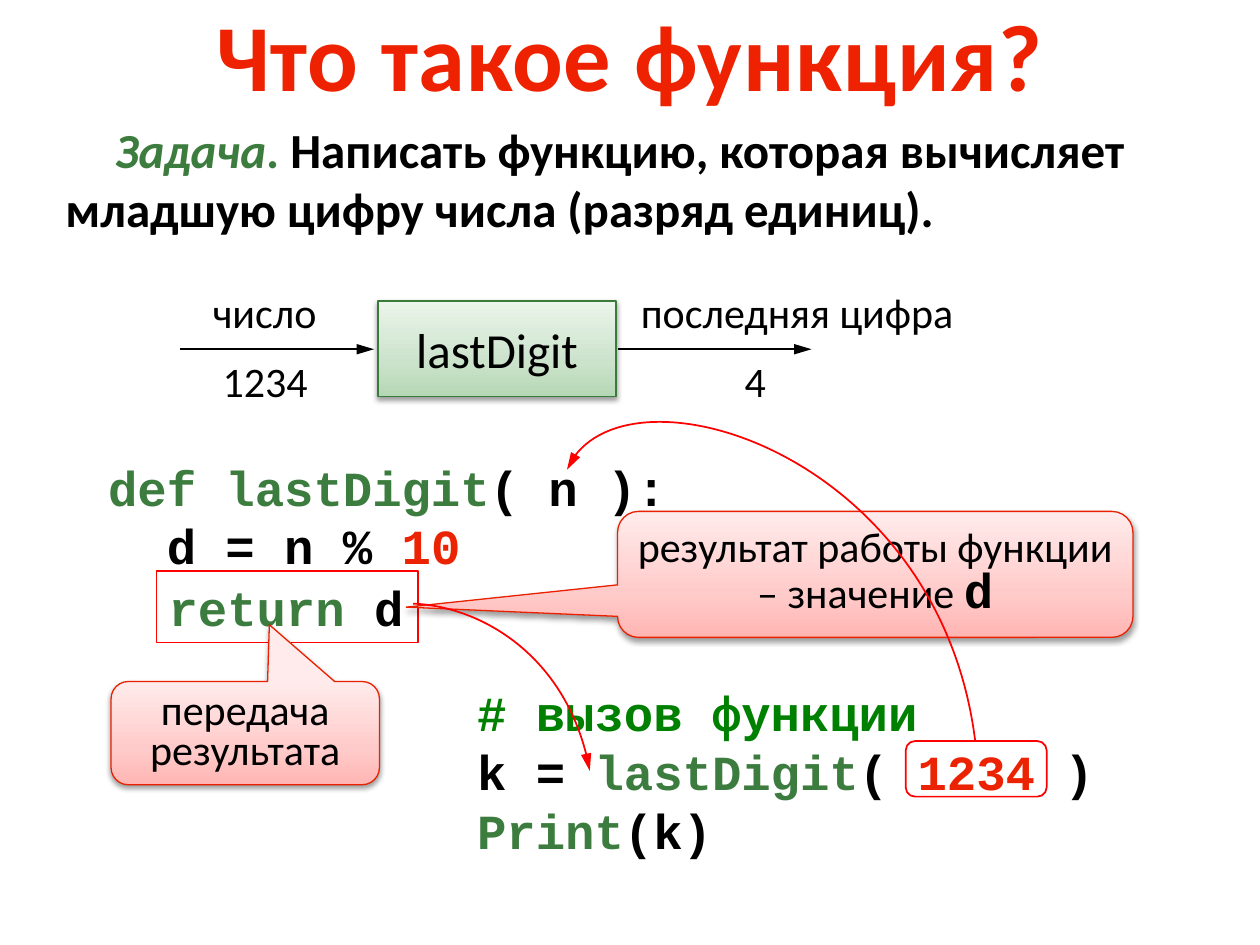
from copy import deepcopy

from lxml import etree
from pptx import Presentation
from pptx.dml.color import RGBColor
from pptx.enum import shapes, text
from pptx.oxml import parse_xml
from pptx.oxml.ns import nsdecls, qn
from pptx.util import Cm, Pt

BLACK = RGBColor(0x00, 0x00, 0x00)
WHITE = RGBColor(0xFF, 0xFF, 0xFF)
TITLE_RED = RGBColor(0xEE, 0x22, 0x00)
NUMBER_RED = RGBColor(0xEC, 0x23, 0x02)
CALLOUT_RED = RGBColor(0xE9, 0x21, 0x00)
LINE_RED = RGBColor(0xFF, 0x00, 0x00)
GREEN = RGBColor(0x3C, 0x7C, 0x3E)
COMMENT_GREEN = RGBColor(0x00, 0x80, 0x00)
BOX_GREEN = RGBColor(0x39, 0x7B, 0x3B)
GREEN_STOPS = [RGBColor(0xB4, 0xD7, 0xB4), RGBColor(0xCB, 0xE2, 0xCB), RGBColor(0xEB, 0xF5, 0xEB)]
PINK_STOPS = [RGBColor(0xFF, 0xB5, 0xB3), RGBColor(0xFF, 0xCB, 0xCA), RGBColor(0xFF, 0xEB, 0xEB)]
SANS, MONO = "Calibri", "Courier New"
SHAPE, ALIGN, ANCHOR = shapes.MSO_SHAPE, text.PP_ALIGN, text.MSO_ANCHOR


def write(sp, lines, size=24, font=SANS, bold=False, align=ALIGN.LEFT,
          anchor=ANCHOR.TOP, wrap=True, indent=0, spacing=None):
    """Each line is a list of (text, colour) or (text, colour, overrides)."""
    tf = sp.text_frame
    tf.word_wrap, tf.vertical_anchor = wrap, anchor
    for i, line in enumerate(lines):
        p = tf.add_paragraph() if i else tf.paragraphs[0]
        p.alignment, p.line_spacing = align, spacing
        if indent:
            p._p.get_or_add_pPr().set("indent", str(Cm(indent)))
        for words, colour, *extra in line:
            look = {"size": size, "name": font, "bold": bold, **(extra[0] if extra else {})}
            r = p.add_run()
            r.text = words
            r.font.color.rgb = colour
            look["size"] = Pt(look["size"])
            for key, value in look.items():
                setattr(r.font, key, value)
    return sp


def add_text(s, box, lines, **fmt):
    return write(s.shapes.add_textbox(*map(Cm, box)), lines, **fmt)


def add_box(s, kind, box, line, width=0.75, fill=None):
    sp = s.shapes.add_shape(kind, *map(Cm, box))
    sp.shadow.inherit = False
    sp.line.color.rgb, sp.line.width = line, Pt(width)
    if fill is None:
        sp.fill.background()
    else:
        sp.fill.solid()
        sp.fill.fore_color.rgb = fill
    return sp


def shade(sp, colours):
    """Three-stop vertical gradient, darkest at the bottom, with a soft shadow."""
    sp.fill.gradient()
    sp.fill.gradient_angle = 90
    stops = sp._element.spPr.find(".//" + qn("a:gsLst"))
    stops.append(deepcopy(stops[-1]))
    for stop, colour, position in zip(sp.fill.gradient_stops, colours, (0, 0.35, 1)):
        stop.color.rgb, stop.position = colour, position
    sp._element.spPr.find(qn("a:effectLst")).append(parse_xml(
        f'<a:outerShdw {nsdecls("a")} blurRad="{Pt(3.1)}" dist="{Pt(1.6)}" dir="5400000" '
        'rotWithShape="0"><a:srgbClr val="000000"><a:alpha val="38000"/></a:srgbClr></a:outerShdw>'))


def finish_arrow(sp, colour):
    sp.line.color.rgb, sp.line.width = colour, Pt(1)
    ln = sp.line._get_or_add_ln()
    etree.SubElement(ln, qn("a:tailEnd"), type="triangle", w="med", len="lg")


def add_arrow(s, x1, x2, y):
    cx = s.shapes.add_connector(shapes.MSO_CONNECTOR.STRAIGHT, Cm(x1), Cm(y), Cm(x2), Cm(y))
    finish_arrow(cx, BLACK)
    etree.SubElement(cx._element.spPr, qn("a:effectLst"))


def add_curve(s, start, *points):
    """Cubic curve: start, two control points, end."""
    fb = s.shapes.build_freeform(Cm(start[0]), Cm(start[1]))
    fb.add_line_segments([(Cm(x), Cm(y)) for x, y in points], close=False)
    sp = fb.convert_to_shape()
    sp.shadow.inherit = False
    sp.fill.background()
    finish_arrow(sp, LINE_RED)
    outline = sp._element.spPr.find(".//" + qn("a:path"))
    segments = outline.findall(qn("a:lnTo"))
    curve = etree.SubElement(outline, qn("a:cubicBezTo"))
    for segment in segments:
        curve.append(segment[0])
        outline.remove(segment)


def heading(s, box):
    sp = add_text(s, box, [[("Что такое функция?", TITLE_RED)]], size=54, bold=True,
                  align=ALIGN.CENTER, anchor=ANCHOR.MIDDLE)
    sp.text_frame.paragraphs[0].runs[0]._r.get_or_add_rPr().set("spc", "50")


def task(s, box):
    add_text(s, box, [[("Задача", GREEN, {"italic": True}), (". ", GREEN),
                       ("Написать функцию, которая вычисляет младшую цифру числа (разряд единиц).",
                        BLACK)]], size=28, bold=True, indent=1)


def flow(s, x, y):
    """Input, function block, output."""
    block = add_box(s, SHAPE.RECTANGLE, (x + 3.99, y + 0.41, 4.8, 1.93), BOX_GREEN)
    shade(block, GREEN_STOPS)
    write(block, [[("lastDigit", BLACK)]], size=28, align=ALIGN.CENTER, anchor=ANCHOR.MIDDLE)
    for left in (0, 8.82):
        add_arrow(s, x + left, x + left + 3.91, y + 1.38)
    for label, left, top, width in (("число", 0.41, 0, 2.84), ("последняя цифра", 9.04, 0, 7.59),
                                    ("1234", 0.61, 1.38, 2.41), ("4", 11.13, 1.38, 0.99)):
        add_text(s, (x + left, y + top, width, 1.27), [[(label, BLACK)]], wrap=False)


def definition(s, x, y):
    code = dict(size=28, font=MONO, bold=True)
    add_text(s, (x, y, 12.57, 3.86), [
        [("def lastDigit", GREEN), ("( n ):", BLACK)],
        [("  d = n % ", BLACK), ("10", NUMBER_RED)]], indent=0.25, **code)
    # Framed return statement
    frame = add_box(s, SHAPE.RECTANGLE, (x + 1.47, y + 2.42, 5.28, 1.45), LINE_RED, fill=WHITE)
    write(frame, [[("return", GREEN), (" d", BLACK)]], wrap=False, **code)


def call(s, x, y):
    add_text(s, (x, y, 14.3, 3.86), [
        [("# вызов функции", COMMENT_GREEN)],
        [("k = ", BLACK), ("lastDigit", GREEN), ("( ", BLACK), ("1234 ", NUMBER_RED), (")", BLACK)],
        [("Print", GREEN), ("(k)", BLACK)]],
        size=28, font=MONO, bold=True, indent=0.25, anchor=ANCHOR.MIDDLE)
    # Frame round the argument
    add_box(s, SHAPE.ROUNDED_RECTANGLE, (x + 9.14, y + 1.33, 2.84, 1.12), LINE_RED, width=1)


def callout(s, box, tip, runs):
    sp = add_box(s, SHAPE.ROUNDED_RECTANGULAR_CALLOUT, box, CALLOUT_RED)
    sp.adjustments[0], sp.adjustments[1] = tip
    shade(sp, PINK_STOPS)
    write(sp, [runs], align=ALIGN.CENTER, anchor=ANCHOR.MIDDLE, spacing=0.8)


def main():
    prs = Presentation()
    prs.slide_width, prs.slide_height = Cm(25.4), Cm(19.05)
    s = prs.slides.add_slide(prs.slide_layouts[6])
    heading(s, (0, 0, 25.4, 2.16))
    task(s, (1.07, 2.29, 23.55, 2.64))
    flow(s, 3.63, 5.66)
    definition(s, 1.68, 9.09)
    callout(s, (2.24, 13.74, 5.41, 2.08), (0.09, -1.05), [("передача результата", BLACK)])
    callout(s, (12.45, 10.31, 10.39, 2.54), (-0.91, 0.26),
            [("результат работы функции – значение ", BLACK),
             ("d", BLACK, {"size": 28, "name": MONO, "bold": True})])
    call(s, 9.12, 13.61)
    # Argument goes in, result comes back
    add_curve(s, (19.66, 14.94), (18.95, 9.25), (12.42, 7.14), (11.43, 9.47))
    add_curve(s, (8.33, 12.17), (9.65, 12.22), (11.48, 13.25), (11.89, 15.54))
    prs.save("out.pptx")


if __name__ == "__main__":
    main()
